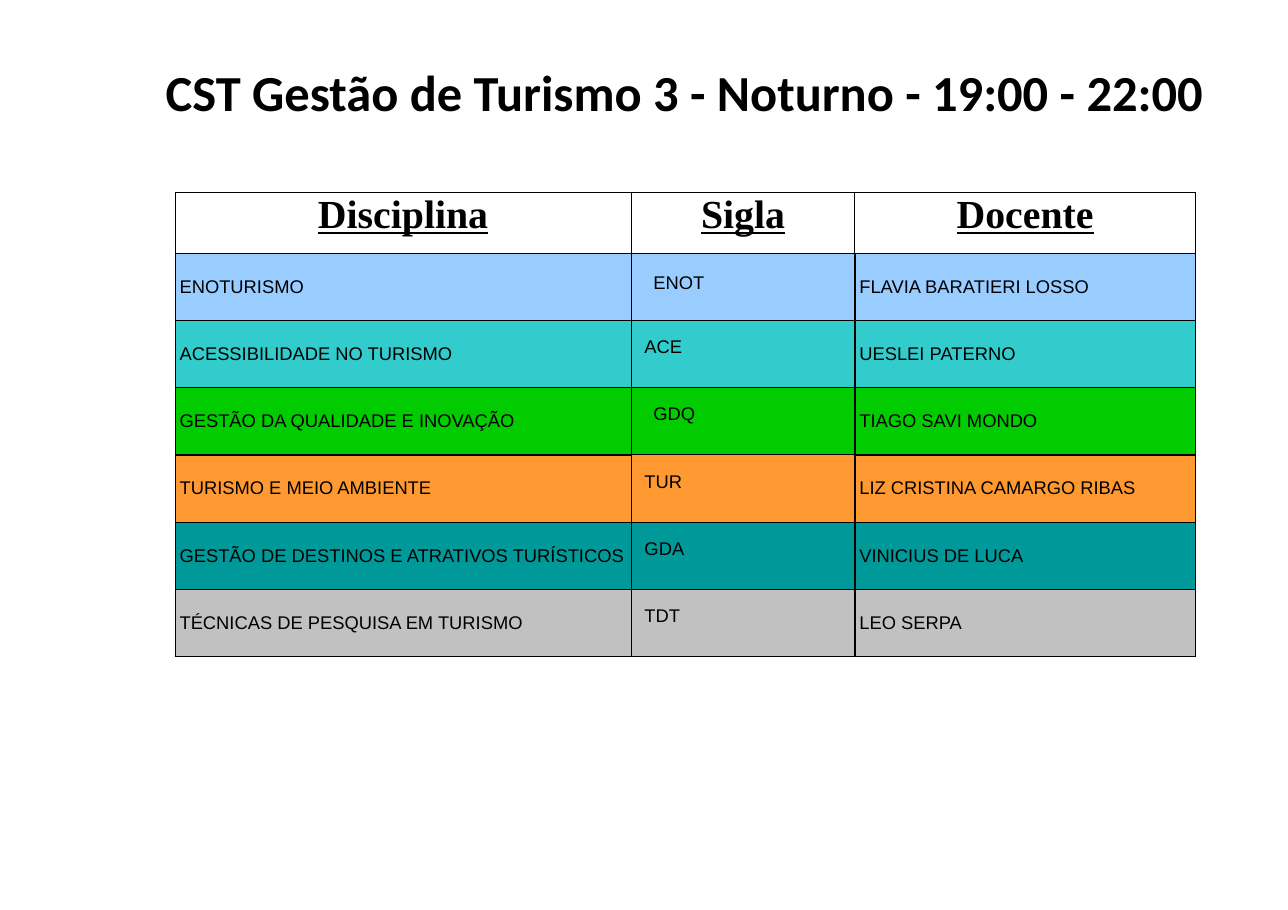
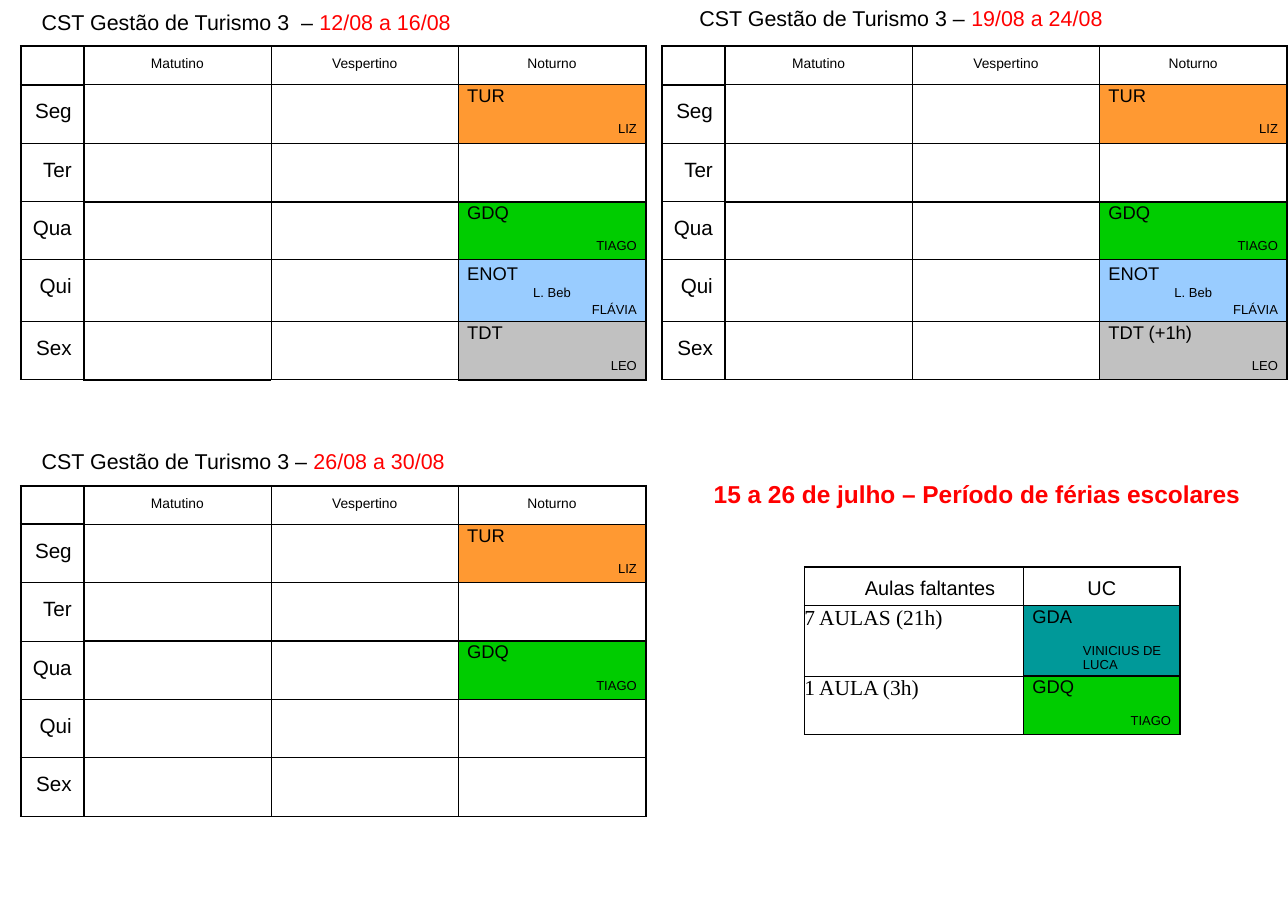
import pptx
import pptx.util
import pptx.dml.color
import pptx.enum.text
import lxml.etree

Inches, Pt = pptx.util.Inches, pptx.util.Pt
RGBColor = pptx.dml.color.RGBColor
ALIGN = pptx.enum.text.PP_ALIGN
MIDDLE = pptx.enum.text.MSO_ANCHOR.MIDDLE

# Colours and line widths
BLACK = RGBColor(0, 0, 0)
RED = RGBColor(0xFF, 0, 0)
FILLS = {
    "ENOT": RGBColor(0x99, 0xCC, 0xFF),
    "ACE": RGBColor(0x32, 0xCC, 0xCC),
    "GDQ": RGBColor(0, 0xCC, 0),
    "TUR": RGBColor(0xFF, 0x99, 0x32),
    "GDA": RGBColor(0, 0x99, 0x99),
    "TDT": RGBColor(0xC1, 0xC1, 0xC1),
}
THIN, MID, THICK = 0.75, 0.94, 1.5

# Content of the course list
TITLE = "CST Gestão de Turismo 3 - Noturno - 19:00 - 22:00"
HEADS = ["Disciplina", "Sigla", "Docente"]
COURSES = [
    ("ENOTURISMO", "ENOT", "FLAVIA BARATIERI LOSSO"),
    ("ACESSIBILIDADE NO TURISMO", "ACE", "UESLEI PATERNO"),
    ("GESTÃO DA QUALIDADE E INOVAÇÃO", "GDQ", "TIAGO SAVI MONDO"),
    ("TURISMO E MEIO AMBIENTE", "TUR", "LIZ CRISTINA CAMARGO RIBAS"),
    ("GESTÃO DE DESTINOS E ATRATIVOS TURÍSTICOS", "GDA", "VINICIUS DE LUCA"),
    ("TÉCNICAS DE PESQUISA EM TURISMO", "TDT", "LEO SERPA"),
]
INSET = {"ENOT": 0.08, "GDQ": 0.08}

# Content of the weekly timetables
SHIFTS = ["Matutino", "Vespertino", "Noturno"]
DAYS = ["Seg", "Ter", "Qua", "Qui", "Sex"]
TUR, GDQ = ("TUR", "LIZ"), ("GDQ", "TIAGO")
ENOT = ("ENOT", "L. Beb", "FLÁVIA")
# label, dates, label place, table place, evening classes, thick bottom columns
WEEKS = [
    ("CST Gestão de Turismo 3  – ", "12/08 a 16/08", (0.27, 0.03), (0.19, 0.42),
     [TUR, None, GDQ, ENOT, ("TDT", "LEO")], (1, 3)),
    ("CST Gestão de Turismo 3 – ", "19/08 a 24/08", (6.24, 0), (6.01, 0.42),
     [TUR, None, GDQ, ENOT, ("TDT (+1h)", "LEO")], ()),
    ("CST Gestão de Turismo 3 – ", "26/08 a 30/08", (0.27, 4.02), (0.19, 4.41),
     [TUR, None, GDQ, None, None], ()),
]
BREAK = "15 a 26 de julho – Período de férias escolares"
MISSED = [("7 AULAS (21h)", ("GDA", "VINICIUS DE LUCA")), ("1 AULA (3h)", GDQ)]


def put(frame, text, size=12, face="Arial", color=BLACK, bold=False, line=False,
        align=ALIGN.LEFT, indent=0, before=0, after=0, space=None, join=False):
    """Write text as a new paragraph, or join it to the last one."""
    para = frame.paragraphs[-1]
    if not join:
        if para.runs:
            para = frame.add_paragraph()
        para.alignment = align
        para.space_before, para.space_after = Pt(before), Pt(after)
        if space:
            para.line_spacing = space
        if indent:
            para._p.get_or_add_pPr().set("marL", str(Inches(indent)))
    run = para.add_run()
    run.text = text
    font = run.font
    font.size, font.name, font.bold, font.underline = Pt(size), face, bold, line
    font.color.rgb = color


def add_box(slide, left, top, width, height, wrap=False):
    frame = slide.shapes.add_textbox(
        Inches(left), Inches(top), Inches(width), Inches(height)).text_frame
    frame.word_wrap = wrap
    frame.auto_size = pptx.enum.text.MSO_AUTO_SIZE.SHAPE_TO_FIT_TEXT
    return frame


def add_grid(slide, left, top, cols, rows):
    grid = slide.shapes.add_table(
        len(rows), len(cols), Inches(left), Inches(top),
        Inches(sum(cols)), Inches(sum(rows))).table
    grid.first_row = grid.horz_banding = False
    for col, width in zip(grid.columns, cols):
        col.width = Inches(width)
    for row, height in zip(grid.rows, rows):
        row.height = Inches(height)
    return grid


def style(cell, edges, pads=(0, 0, 0, 0), fill=None):
    """Set borders and margins (left, top, right, bottom) and fill."""
    props = cell._tc.get_or_add_tcPr()
    space = "{http://schemas.openxmlformats.org/drawingml/2006/main}"
    left, top, right, bottom = edges
    for side, width in (("L", left), ("R", right), ("T", top), ("B", bottom)):
        edge = lxml.etree.SubElement(props, space + "ln" + side, w=str(Pt(width)))
        solid = lxml.etree.SubElement(edge, space + "solidFill")
        lxml.etree.SubElement(solid, space + "srgbClr", val=str(BLACK))
    cell.margin_left, cell.margin_top, cell.margin_right, cell.margin_bottom = map(
        Inches, pads)
    if fill is None:
        cell.fill.background()
    else:
        cell.fill.solid()
        cell.fill.fore_color.rgb = fill
    return cell.text_frame


def put_class(cell, edges, names):
    """Fill a cell with a class code, an optional room and the teacher."""
    code, *room, tutor = names
    key = code.split()[0]
    frame = style(cell, edges, (0.08, 0.01, 0.08, 0), FILLS[key])
    put(frame, code, space=1.12 if room else None)
    for name in room:
        put(frame, name, size=8.5, indent=0.6, space=1.09)
    long = " " in tutor
    put(frame, tutor, size=8.5, before=2 if room else 10.3,
        align=ALIGN.LEFT if long else ALIGN.RIGHT, indent=0.46 if long else 0)


def add_courses(slide):
    frame = add_box(slide, 1.12, 0.41, 10.19, 0.76, wrap=True)
    frame.margin_top = frame.margin_bottom = Inches(0.1)
    put(frame, TITLE, size=33, face="Calibri", bold=True, align=ALIGN.CENTER,
        space=1.08, after=8)
    grid = add_grid(slide, 1.59, 1.75, (4.14, 2.03, 3.09),
                    [0.55] + [0.61] * len(COURSES))
    for c, head in enumerate(HEADS):
        edges = (THIN, THIN, THIN, THIN if c == 1 else MID)
        put(style(grid.cell(0, c), edges, (0.08, 0, 0.08, 0)), head, size=26,
            face="Times New Roman", bold=True, line=True, align=ALIGN.CENTER)
    for r, course in enumerate(COURSES, 1):
        code = course[1]
        for c, text in enumerate(course):
            cell = grid.cell(r, c)
            if c == 1:
                frame = style(cell, (MID, THIN, MID, THIN),
                              (0.12, 0.15, 0.12, 0.15), FILLS[code])
                put(frame, text, indent=INSET.get(code, 0),
                    space=1.12 if code == "ENOT" else None)
            else:
                cell.vertical_anchor = MIDDLE
                put(style(cell, [MID] * 4, (0.04, 0.03, 0.04, 0.03), FILLS[code]), text)


def add_week(slide, label, dates, spot, place, plan, foot):
    frame = add_box(slide, *spot, 3.96, 0.34)
    put(frame, label, size=14, indent=0.01)
    put(frame, dates, size=14, color=RED, join=True)
    grid = add_grid(slide, *place, [0.57] + [1.7] * 3, [0.35] + [0.53] * len(DAYS))
    last = len(DAYS)
    for r in range(last + 1):
        for c in range(4):
            # Thick lines: frame, day column, header corner, below Tuesday
            heavy = (c < 2,
                     r == 0 or (r == 1 and c == 0) or (r == 3 and c > 0),
                     c in (0, 3),
                     r == c == 0 or (r == 2 and c > 0) or (r == last and c in foot))
            edges = [THICK if on else THIN for on in heavy]
            cell = grid.cell(r, c)
            if r and c == 3 and plan[r - 1]:
                put_class(cell, edges, plan[r - 1])
            elif r and c == 0:
                put(style(cell, edges, (0, 0.14, 0.11, 0)), DAYS[r - 1], size=13.5,
                    align=ALIGN.RIGHT)
            elif c and r == 0:
                put(style(cell, edges, (0, 0.09, 0, 0)), SHIFTS[c - 1], size=9,
                    align=ALIGN.CENTER)
            else:
                style(cell, edges)


def add_missed(slide):
    put(add_box(slide, 6.38, 4.3, 5.04, 0.37), BREAK, size=16, color=RED, bold=True)
    grid = add_grid(slide, 7.3, 5.15, (1.99, 1.42), [0.35] + [0.53] * len(MISSED))
    pads = (0, 0.09, 0, 0)
    put(style(grid.cell(0, 0), (THIN, THICK, THIN, THIN), pads),
        "Aulas faltantes", size=13, indent=0.55)
    put(style(grid.cell(0, 1), (THIN, THICK, THICK, THIN), pads),
        "UC", size=13, align=ALIGN.CENTER)
    for r, (count, names) in enumerate(MISSED, 1):
        put(style(grid.cell(r, 0), [THIN] * 4), count, size=14, face="Times New Roman")
        edges = (THIN, THIN, THICK, THICK) if r == 1 else (THIN, THICK, THICK, THIN)
        put_class(grid.cell(r, 1), edges, names)


def main():
    deck = pptx.Presentation()
    deck.slide_width, deck.slide_height = Inches(11.69), Inches(8.26)
    blank = deck.slide_layouts[6]
    add_courses(deck.slides.add_slide(blank))
    slide = deck.slides.add_slide(blank)
    for week in WEEKS:
        add_week(slide, *week)
    add_missed(slide)
    deck.save("out.pptx")


if __name__ == "__main__":
    main()
